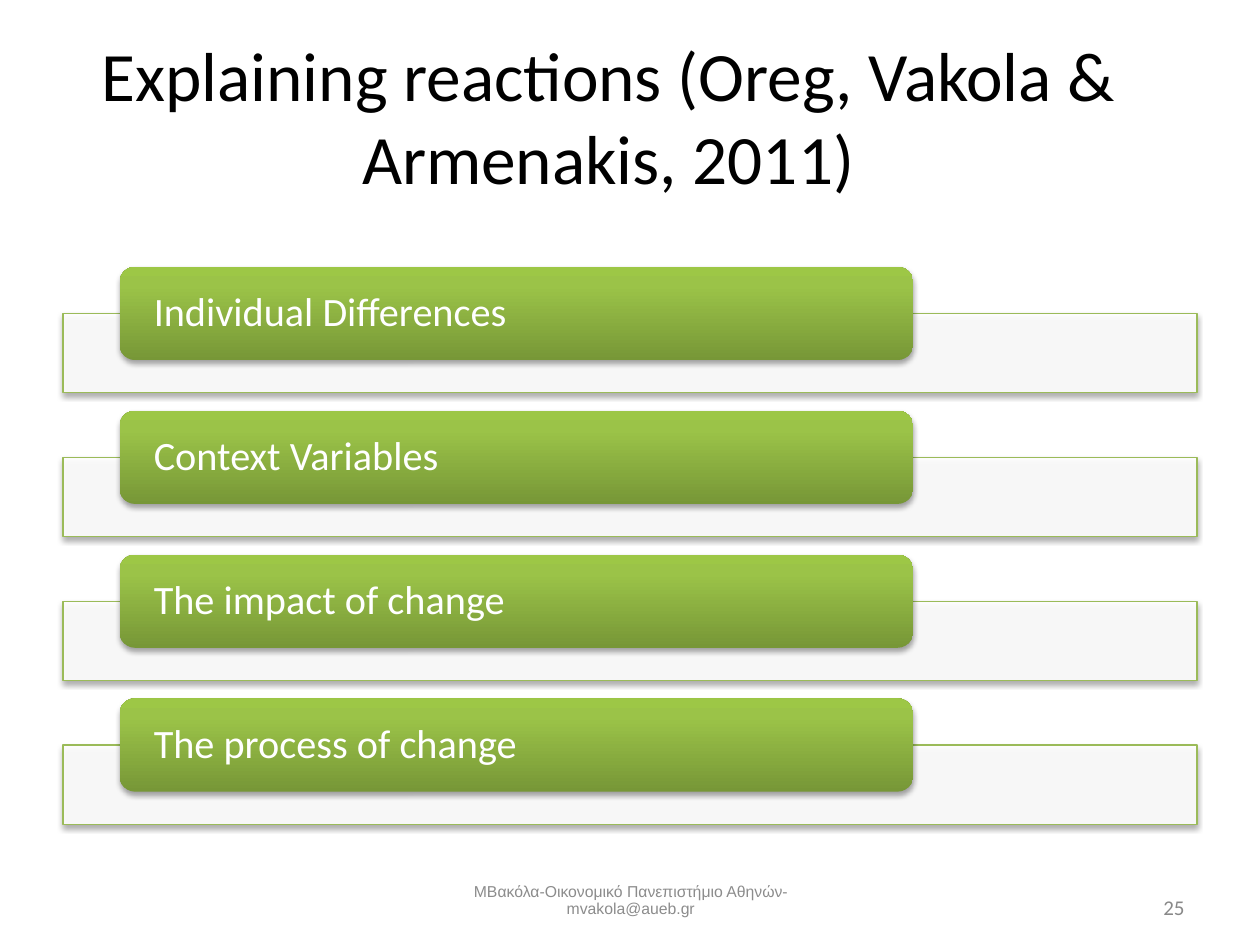
from copy import deepcopy
from dataclasses import dataclass

from lxml.etree import SubElement
from pptx import Presentation
from pptx.dml.color import RGBColor
from pptx.enum.shapes import MSO_SHAPE
from pptx.enum.text import MSO_ANCHOR, PP_ALIGN
from pptx.oxml.ns import qn
from pptx.shapes.autoshape import Shape
from pptx.slide import Slide
from pptx.util import Cm, Pt

BLACK = RGBColor(0x00, 0x00, 0x00)
WHITE = RGBColor(0xFF, 0xFF, 0xFF)
NUMBER_GREY = RGBColor(0x89, 0x89, 0x89)
FOOTER_GREY = RGBColor(0x8C, 0x8C, 0x8C)
PANEL_GREEN = RGBColor(0x9B, 0xBB, 0x59)
GRADIENT = (
    (0, RGBColor(0x77, 0x97, 0x37)),
    (0.8, RGBColor(0x9B, 0xC3, 0x48)),
    (1, RGBColor(0x9D, 0xC7, 0x46)),
)

FACTORS = (
    "Individual Differences",
    "Context Variables",
    "The impact of change",
    "The process of change",
)
FIRST_ROW_TOP = 5.38
ROW_PITCH = 2.9
PANEL_DROP = 0.94


@dataclass(frozen=True)
class TextStyle:
    font: str
    size: float
    color: RGBColor
    align: PP_ALIGN
    anchor: MSO_ANCHOR
    line_spacing: float = 1.0
    space_after: float = 0


@dataclass(frozen=True)
class Label:
    text: str
    left: float
    top: float
    width: float
    height: float
    style: TextStyle


FACTOR_STYLE = TextStyle("Calibri", 23, WHITE, PP_ALIGN.LEFT, MSO_ANCHOR.MIDDLE, 0.9)
LABELS = (
    Label("Explaining reactions (Oreg, Vakola & Armenakis, 2011)",
          1.24, 0.41, 22.05, 3.84,
          TextStyle("Calibri", 39.6, BLACK, PP_ALIGN.CENTER, MSO_ANCHOR.MIDDLE)),
    Label("25", 18.21, 17.35, 5.92, 1.32,
          TextStyle("Calibri", 12, NUMBER_GREY, PP_ALIGN.RIGHT, MSO_ANCHOR.BOTTOM,
                    space_after=6)),
    Label("ΜΒακόλα-Οικονομικό Πανεπιστήμιο Αθηνών-mvakola@aueb.gr",
          8.69, 17.65, 8.05, 1.02,
          TextStyle("Arial", 9, FOOTER_GREY, PP_ALIGN.CENTER, MSO_ANCHOR.MIDDLE,
                    0.9, 6)),
)


def write_text(box: Shape, text: str, style: TextStyle) -> None:
    frame = box.text_frame
    frame.text = text
    frame.word_wrap = True
    frame.vertical_anchor = style.anchor
    para = frame.paragraphs[0]
    para.alignment = style.align
    para.line_spacing = style.line_spacing
    para.space_after = Pt(style.space_after)
    span = para.runs[0]
    span.font.name = style.font
    span.font.size = Pt(style.size)
    span.font.color.rgb = style.color


def add_label(page: Slide, label: Label) -> None:
    box = page.shapes.add_textbox(
        Cm(label.left), Cm(label.top), Cm(label.width), Cm(label.height))
    write_text(box, label.text, label.style)


def add_shadow(shape: Shape) -> None:
    shape.shadow.inherit = False
    effects = shape.element.spPr.find(qn("a:effectLst"))
    shadow = SubElement(effects, qn("a:outerShdw"), blurRad=str(Pt(3.1)),
                        dist=str(Pt(1.8)), dir="5400000", rotWithShape="0")
    color = SubElement(shadow, qn("a:srgbClr"), val=str(BLACK))
    SubElement(color, qn("a:alpha"), val="35000")


def add_panel(page: Slide, top: float) -> None:
    panel = page.shapes.add_shape(
        MSO_SHAPE.RECTANGLE, Cm(1.27), Cm(top), Cm(22.86), Cm(1.6))
    panel.fill.solid()
    panel.fill.fore_color.rgb = WHITE
    fill_color = panel.element.spPr.find(qn("a:solidFill")).find(qn("a:srgbClr"))
    SubElement(fill_color, qn("a:alpha"), val="90000")
    panel.line.color.rgb = PANEL_GREEN
    panel.line.width = Pt(0.75)
    add_shadow(panel)


def add_factor(page: Slide, text: str, top: float) -> None:
    card = page.shapes.add_shape(
        MSO_SHAPE.ROUNDED_RECTANGLE, Cm(2.41), Cm(top), Cm(16), Cm(1.88))
    card.fill.gradient()
    card.fill.gradient_angle = 90
    stop_list = card.element.spPr.find(qn("a:gradFill")).find(qn("a:gsLst"))
    stop_list.append(deepcopy(stop_list[0]))
    for stop, (position, color) in zip(card.fill.gradient_stops, GRADIENT):
        stop.position = position
        stop.color.rgb = color
    card.line.fill.background()
    add_shadow(card)
    frame = card.text_frame
    frame.margin_left = frame.margin_right = Cm(0.6)
    frame.margin_top = frame.margin_bottom = 0
    write_text(card, text, FACTOR_STYLE)


def main() -> None:
    deck = Presentation()
    deck.slide_width = Cm(25.4)
    deck.slide_height = Cm(19.05)
    page = deck.slides.add_slide(deck.slide_layouts[6])
    for label in LABELS:
        add_label(page, label)
    for index, factor in enumerate(FACTORS):
        top = FIRST_ROW_TOP + index * ROW_PITCH
        add_panel(page, top + PANEL_DROP)
        add_factor(page, factor, top)
    deck.save("out.pptx")


if __name__ == "__main__":
    main()
